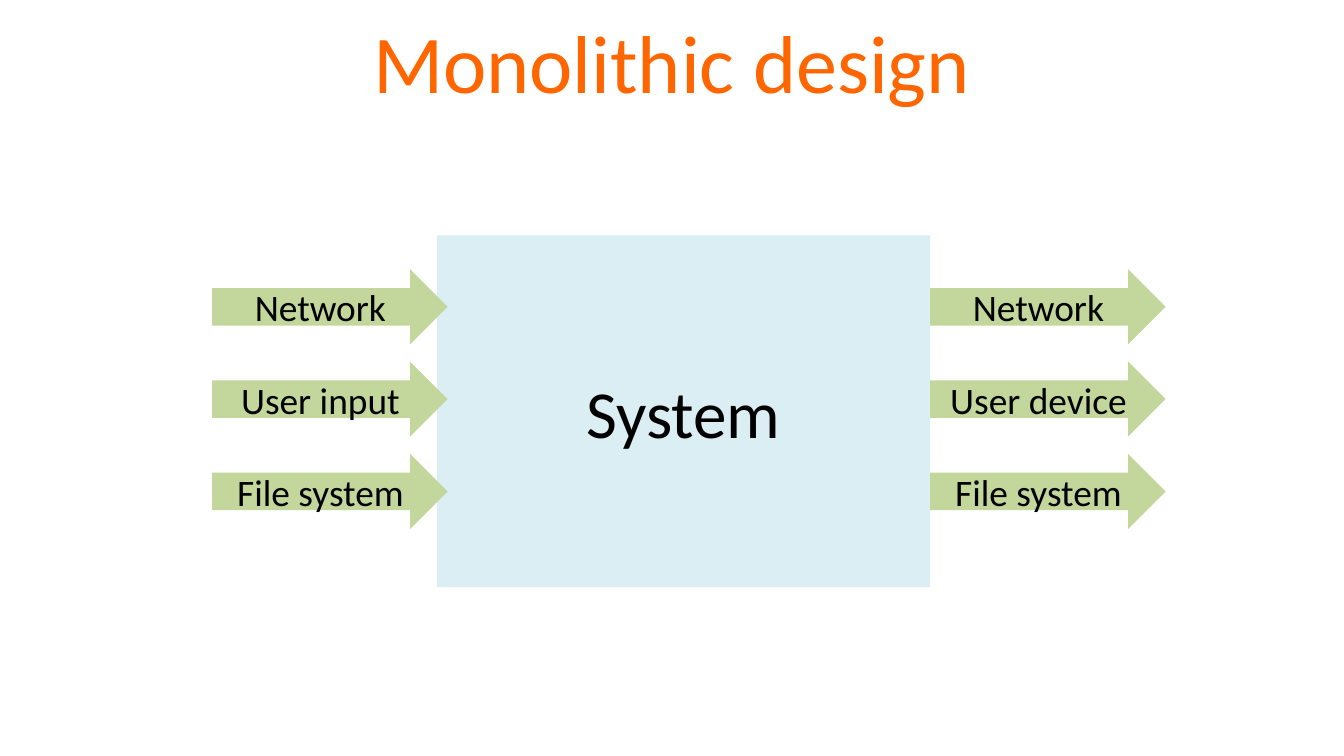
from dataclasses import dataclass

from pptx import Presentation
from pptx.dml.color import RGBColor
from pptx.enum.shapes import MSO_SHAPE
from pptx.enum.text import MSO_ANCHOR, PP_ALIGN
from pptx.util import Cm, Pt

RECT, ARROW = MSO_SHAPE.RECTANGLE, MSO_SHAPE.RIGHT_ARROW
MIDDLE, CENTER = MSO_ANCHOR.MIDDLE, PP_ALIGN.CENTER


@dataclass(frozen=True)
class Theme:
    font: str = "Calibri"
    back: str = "FFFFFF"
    head: str = "FF6600"
    ink: str = "000000"
    core: str = "DBEEF4"
    flow: str = "C3D69B"
    head_pt: int = 44
    core_pt: int = 36
    flow_pt: int = 20


THEME = Theme()


def set_text(shape, text, size, color):
    """Write one centred line of text into a shape."""
    frame = shape.text_frame
    frame.text = text
    frame.word_wrap = True
    frame.vertical_anchor = MIDDLE
    para = frame.paragraphs[0]
    para.alignment = CENTER
    font = para.runs[0].font
    look = {"name": THEME.font, "size": Pt(size), "bold": False}
    for key, value in look.items():
        setattr(font, key, value)
    font.color.rgb = RGBColor.from_string(color)


def add_block(slide, kind, box, fill, text, size):
    """Add a flat filled shape with a label."""
    shape = slide.shapes.add_shape(kind, *map(Cm, box))
    shape.shadow.inherit = False
    shape.fill.solid()
    shape.fill.fore_color.rgb = RGBColor.from_string(fill)
    shape.line.fill.background()
    set_text(shape, text, size, THEME.ink)


def add_title(slide, box, text):
    """Place the title placeholder in the box."""
    title = slide.shapes.title
    for key, value in zip(("left", "top", "width", "height"), box):
        setattr(title, key, Cm(value))
    set_text(title, text, THEME.head_pt, THEME.head)


def add_flows(slide, box, labels):
    """Spread a column of arrows evenly from top to bottom of the box."""
    left, top, width, height = box
    tall = 1.42
    step = (height - tall) / (len(labels) - 1)
    for i, label in enumerate(labels):
        place = (left, top + i * step, width, tall)
        add_block(slide, ARROW, place, THEME.flow, label, THEME.flow_pt)


def add_system(slide, box, inputs, outputs):
    """Draw the system with arrows leading in and out."""
    left, top, width, height = box
    span, lap = 4.45, 0.2
    add_block(slide, RECT, box, THEME.core, "System", THEME.core_pt)
    # Inputs reach slightly into the system; outputs start at its edge
    column = (top + 0.64, span, 4.91)
    add_flows(slide, (left - span + lap, *column), inputs)
    add_flows(slide, (left + width, *column), outputs)


def main():
    deck = Presentation()
    deck.slide_width, deck.slide_height = Cm(25.4), Cm(14.29)
    slide = deck.slides.add_slide(deck.slide_layouts[5])
    slide.background.fill.solid()
    slide.background.fill.fore_color.rgb = RGBColor.from_string(THEME.back)

    add_title(slide, (1.27, -0.05, 22.86, 2.39), "Monolithic design")
    add_system(
        slide,
        (8.26, 4.45, 9.32, 6.65),
        ("Network", "User input", "File system"),
        ("Network", "User device", "File system"),
    )
    deck.save("out.pptx")


if __name__ == "__main__":
    main()
